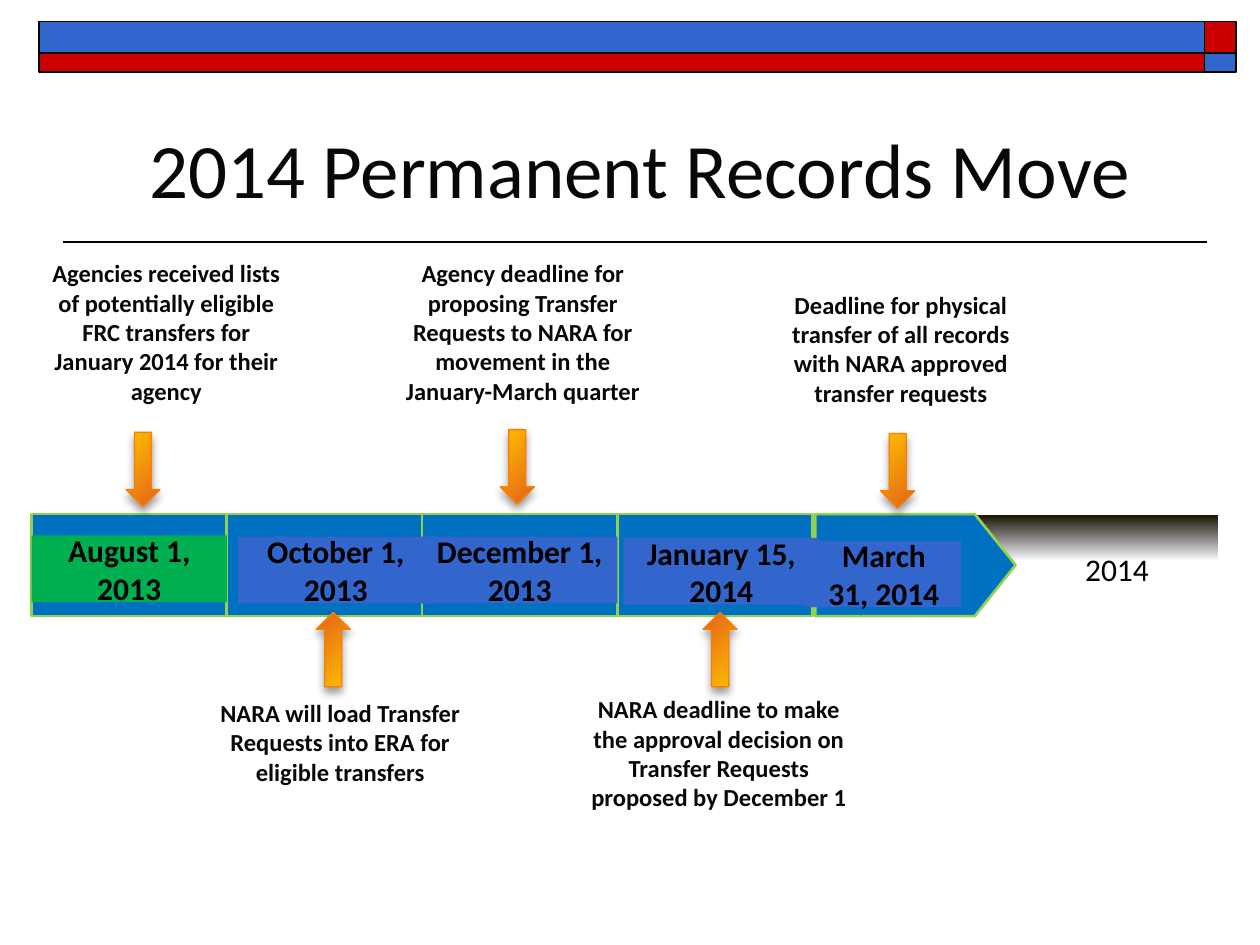
from dataclasses import dataclass

from lxml.etree import SubElement
from pptx import Presentation
from pptx.dml.color import RGBColor
from pptx.enum.shapes import MSO_CONNECTOR, MSO_SHAPE
from pptx.enum.text import MSO_ANCHOR, MSO_AUTO_SIZE, PP_ALIGN
from pptx.oxml.ns import qn
from pptx.util import Inches, Pt

BLACK = RGBColor(0x00, 0x00, 0x00)
INK = RGBColor(0x08, 0x08, 0x08)
RED = RGBColor(0xCC, 0x00, 0x00)
BLUE = RGBColor(0x33, 0x66, 0xCC)
BAND_BLUE = RGBColor(0x00, 0x70, 0xC0)
LIME = RGBColor(0x92, 0xD0, 0x50)
GREEN = RGBColor(0x00, 0xB0, 0x50)
BROWN = RGBColor(0x1A, 0x14, 0x00)
AMBER = RGBColor(0xFF, 0xC0, 0x00)
ORANGE = RGBColor(0xE3, 0x61, 0x19)
ARROW_EDGE = RGBColor(0xFC, 0x7E, 0x00)

COLUMNS, ROWS = 100, 75
TITLE_FORMAT = {"size": Pt(44), "bold": False}
DATE_FORMAT = {"size": Pt(18), "bold": True}
YEAR_FORMAT = {"size": Pt(18), "bold": False}
CAPTION_FORMAT = {"size": Pt(14), "bold": True}

BAND_LEFT, BAND_TOP, BAND_HEIGHT = 2.5, 40.8, 8.1
STEP = 15.5
LABEL_HEIGHT = 5.3
ARROW_SIZE = (2.7, 5.9)


@dataclass
class Milestone:
    """One date on the timeline; boxes are in grid columns and rows."""
    date: str
    label: tuple  # left, top, width
    caption: str
    caption_box: tuple
    arrow: tuple  # left, top
    fill: RGBColor = BLUE

    @property
    def points_up(self):
        return self.arrow[1] > BAND_TOP


MILESTONES = [
    Milestone("August 1, 2013", (2.5, 42.5, STEP),
              "Agencies received lists of potentially eligible FRC transfers "
              "for January 2014 for their agency",
              (2.5, 20, 21.4, 12.8), (10, 34.3), GREEN),
    Milestone("October 1, 2013", (18.9, 42.6, STEP),
              "NARA will load Transfer Requests into ERA for eligible transfers",
              (16.3, 54.9, 21.4, 8.1), (25.1, 48.6)),
    Milestone("December 1, 2013", (33.5, 42.6, STEP),
              "Agency deadline for proposing Transfer Requests to NARA for "
              "movement in the January-March quarter",
              (30.8, 20, 21.4, 12.8), (39.7, 34.1)),
    Milestone("January 15, 2014", (49.5, 42.7, STEP),
              "NARA deadline to make the approval decision on Transfer "
              "Requests proposed by December 1",
              (45.8, 54.6, 22.5, 10.4), (55.8, 48.6)),
    Milestone("March 31, 2014", (64, 42.9, 12.3),
              "Deadline for physical transfer of all records with NARA "
              "approved transfer requests",
              (60.8, 22.5, 21.4, 10.4), (69.9, 34.4)),
]


class TimelineSlide:
    font = "Calibri"

    def __init__(self, presentation):
        self.column = presentation.slide_width / COLUMNS
        self.row = presentation.slide_height / ROWS
        self.slide = presentation.slides.add_slide(presentation.slide_layouts[5])

    def place(self, left, top, width, height):
        return (round(left * self.column), round(top * self.row),
                round(width * self.column), round(height * self.row))

    def set_text(self, shape, text, font_format, color=BLACK,
                 anchor=MSO_ANCHOR.MIDDLE, auto_size=MSO_AUTO_SIZE.NONE):
        frame = shape.text_frame
        frame.text = text
        for name, value in {"word_wrap": True, "auto_size": auto_size,
                            "vertical_anchor": anchor}.items():
            setattr(frame, name, value)
        paragraph = frame.paragraphs[0]
        paragraph.alignment = PP_ALIGN.CENTER
        font = paragraph.runs[0].font
        for name, value in {"name": self.font, **font_format}.items():
            setattr(font, name, value)
        font.color.rgb = color

    def title(self, text, box):
        shape = self.slide.shapes.title
        for name, value in zip(("left", "top", "width", "height"), self.place(*box)):
            setattr(shape, name, value)
        self.set_text(shape, text, TITLE_FORMAT, INK)
        shape.text_frame.margin_left = shape.text_frame.margin_right = 0

    def shape(self, box, fill=None, edge=None, edge_width=1, kind=MSO_SHAPE.RECTANGLE):
        shape = self.slide.shapes.add_shape(kind, *self.place(*box))
        shape.shadow.inherit = False
        if fill is not None:
            shape.fill.solid()
            shape.fill.fore_color.rgb = fill
        if edge is None:
            shape.line.fill.background()
        else:
            shape.line.color.rgb = edge
            shape.line.width = Pt(edge_width)
        return shape

    def gradient(self, shape, start, end, angle):
        """Fill from start to end; the angle runs counter-clockwise."""
        shape.fill.gradient()
        shape.fill.gradient_angle = angle
        for stop, color, position in zip(shape.fill.gradient_stops, (start, end), (0, 1)):
            stop.color.rgb = color
            stop.position = position

    def fade(self, box):
        """Dark strip that fades to fully transparent at its foot."""
        shape = self.shape(box)
        self.gradient(shape, BROWN, BLACK, 270)
        last_color = list(shape.element.spPr.iter(qn("a:srgbClr")))[-1]
        SubElement(last_color, qn("a:alpha"), val="0")

    def arrow(self, left, top, points_up):
        shape = self.shape((left, top, *ARROW_SIZE), edge=ARROW_EDGE, edge_width=0.75,
                           kind=MSO_SHAPE.DOWN_ARROW)
        shape.rotation = 180 if points_up else 0
        self.gradient(shape, AMBER, ORANGE, 315)
        effects = shape.element.spPr.find(qn("a:effectLst"))
        shadow = SubElement(effects, qn("a:outerShdw"), blurRad=str(int(Pt(5))),
                            dist=str(int(Pt(3))), dir="5400000", rotWithShape="0")
        color = SubElement(shadow, qn("a:srgbClr"), val=str(BLACK))
        SubElement(color, qn("a:alpha"), val="40000")

    def text(self, text, box, font_format, **options):
        shape = self.slide.shapes.add_textbox(*self.place(*box))
        self.set_text(shape, text, font_format, **options)

    def rule(self, left, right, row):
        start, y, end, _ = self.place(left, row, right, 0)
        line = self.slide.shapes.add_connector(MSO_CONNECTOR.STRAIGHT, end, y, start, y)
        line.line.color.rgb = BLACK
        line.line.width = Pt(1)
        SubElement(line._element.spPr, qn("a:effectLst"))


def draw_header(page):
    page.rule(5, 95.8, 19.2)
    for top, height, colors in ((1.7, 2.5, (BLUE, RED)), (4.2, 1.5, (RED, BLUE))):
        for left, width, color in zip((3.1, 95.6), (92.5, 2.5), colors):
            page.shape((left, top, width, height), color, BLACK)
    page.title("2014 Permanent Records Move", (4.2, 10, 93.2, 6.6))


def draw_timeline(page):
    page.fade((3.3, 40.9, 93.3, 3.5))
    tip = page.shape((64.7, BAND_TOP, 15.9, BAND_HEIGHT), BAND_BLUE, LIME, 1.5,
                     MSO_SHAPE.PENTAGON)
    tip.adjustments[0] = 0.4
    for index in range(len(MILESTONES) - 1):
        page.shape((BAND_LEFT + index * STEP, BAND_TOP, STEP, BAND_HEIGHT),
                   BAND_BLUE, LIME, 1.5)
    for milestone in MILESTONES:
        label = page.shape((*milestone.label, LABEL_HEIGHT), milestone.fill)
        page.set_text(label, milestone.date, DATE_FORMAT)
    page.text("2014", (80.9, 42.5, STEP, LABEL_HEIGHT), YEAR_FORMAT)


def draw_callouts(page):
    for milestone in MILESTONES:
        page.text(milestone.caption, milestone.caption_box, CAPTION_FORMAT, color=INK,
                  anchor=MSO_ANCHOR.TOP, auto_size=MSO_AUTO_SIZE.SHAPE_TO_FIT_TEXT)
        page.arrow(*milestone.arrow, milestone.points_up)


def main():
    presentation = Presentation()
    presentation.slide_width, presentation.slide_height = Inches(10), Inches(7.5)
    page = TimelineSlide(presentation)
    draw_header(page)
    draw_timeline(page)
    draw_callouts(page)
    presentation.save("out.pptx")


if __name__ == "__main__":
    main()
